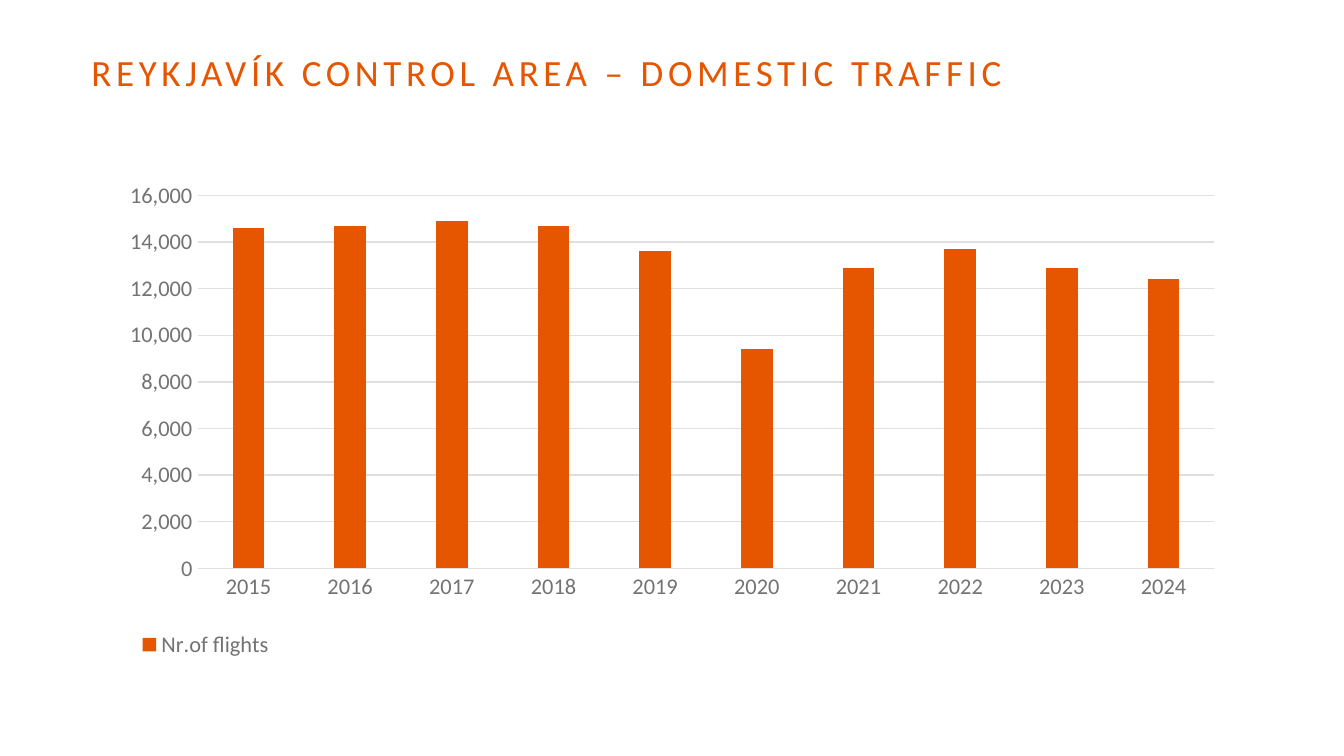
from pptx import Presentation
from pptx.chart.data import CategoryChartData
from pptx.dml.color import RGBColor
from pptx.enum.chart import XL_CHART_TYPE, XL_LEGEND_POSITION, XL_TICK_MARK
from pptx.enum.text import MSO_ANCHOR
from pptx.oxml import parse_xml
from pptx.oxml.ns import nsdecls, qn
from pptx.util import Inches, Pt

ORANGE = RGBColor(0xE6, 0x55, 0x00)
GREY = RGBColor(0x73, 0x73, 0x73)
LIGHT = RGBColor(0xDF, 0xDF, 0xDF)
DARK = RGBColor(0x27, 0x27, 0x27)
FONT = "Calibri"


def set_font(font, size, color):
    for name, value in {"name": FONT, "size": Pt(size), "bold": False}.items():
        setattr(font, name, value)
    font.color.rgb = color


def make_layout(x, y, w, h, inner=False):
    target = '<c:layoutTarget val="inner"/>' if inner else ""
    values = {"xMode": "edge", "yMode": "edge", "x": x, "y": y, "w": w, "h": h}
    parts = "".join(f'<c:{k} val="{v}"/>' for k, v in values.items())
    return parse_xml(f"<c:layout {nsdecls('c')}><c:manualLayout>"
                     f"{target}{parts}</c:manualLayout></c:layout>")


# Widescreen 16:9 slide
prs = Presentation()
prs.slide_width = Inches(10)
prs.slide_height = Inches(10 * 9 / 16)
s = prs.slides.add_slide(prs.slide_layouts[6])

# Title
tf = s.shapes.add_textbox(Inches(0.68), Inches(0.18), Inches(7.25), Inches(0.67)).text_frame
for name, value in {"word_wrap": True, "vertical_anchor": MSO_ANCHOR.MIDDLE,
                    "margin_left": 0, "margin_right": 0,
                    "margin_top": 0, "margin_bottom": 0}.items():
    setattr(tf, name, value)
p = tf.paragraphs[0]
p.line_spacing = Pt(26)
r = p.add_run()
r.text = "REYKJAVÍK CONTROL AREA – DOMESTIC TRAFFIC"
set_font(r.font, 19.8, ORANGE)
r.font._element.set("spc", "250")

# Flights per year
data = CategoryChartData(number_format="#,##0")
data.categories = [str(year) for year in range(2015, 2025)]
data.add_series("Nr.of flights", [14600, 14700, 14900, 14700, 13600,
                                  9400, 12900, 13700, 12900, 12400])
chart = s.shapes.add_chart(XL_CHART_TYPE.COLUMN_STACKED, Inches(0.68), Inches(1.31),
                           Inches(8.51), Inches(3.71), data).chart
chart.has_title = False
set_font(chart.font, 10, DARK)

# Columns
plot = chart.plots[0]
for name, value in {"gap_width": 219, "overlap": 100, "vary_by_categories": False}.items():
    setattr(plot, name, value)
fill = plot.series[0].format.fill
fill.solid()
fill.fore_color.rgb = ORANGE

# Axes and gridlines
cat_axis, val_axis = chart.category_axis, chart.value_axis
for axis in (cat_axis, val_axis):
    axis.major_tick_mark = axis.minor_tick_mark = XL_TICK_MARK.NONE
    set_font(axis.tick_labels.font, 12, GREY)
for name, value in {"minimum_scale": 0, "maximum_scale": 16000, "major_unit": 2000,
                    "has_major_gridlines": True}.items():
    setattr(val_axis, name, value)
val_axis.tick_labels.number_format = "#,##0"
val_axis.tick_labels.number_format_is_linked = False
val_axis.format.line.fill.background()
for line in (cat_axis.format.line, val_axis.major_gridlines.format.line):
    line.color.rgb = LIGHT
    line.width = Pt(0.75)

# Legend
chart.has_legend = True
legend = chart.legend
legend.position = XL_LEGEND_POSITION.BOTTOM
legend.include_in_layout = False
set_font(legend.font, 12, GREY)

# Places of plot area and legend, as shares of the chart
plot_area = chart._chartSpace.chart.plotArea
for old in plot_area.findall(qn("c:layout")):
    plot_area.remove(old)
plot_area.insert(0, make_layout(0.093, 0.039, 0.889, 0.748, inner=True))
for old in legend._element.findall(qn("c:layout")):
    legend._element.remove(old)
legend._element.find(qn("c:legendPos")).addnext(make_layout(0.03, 0.9, 0.14, 0.08))

prs.save("out.pptx")
